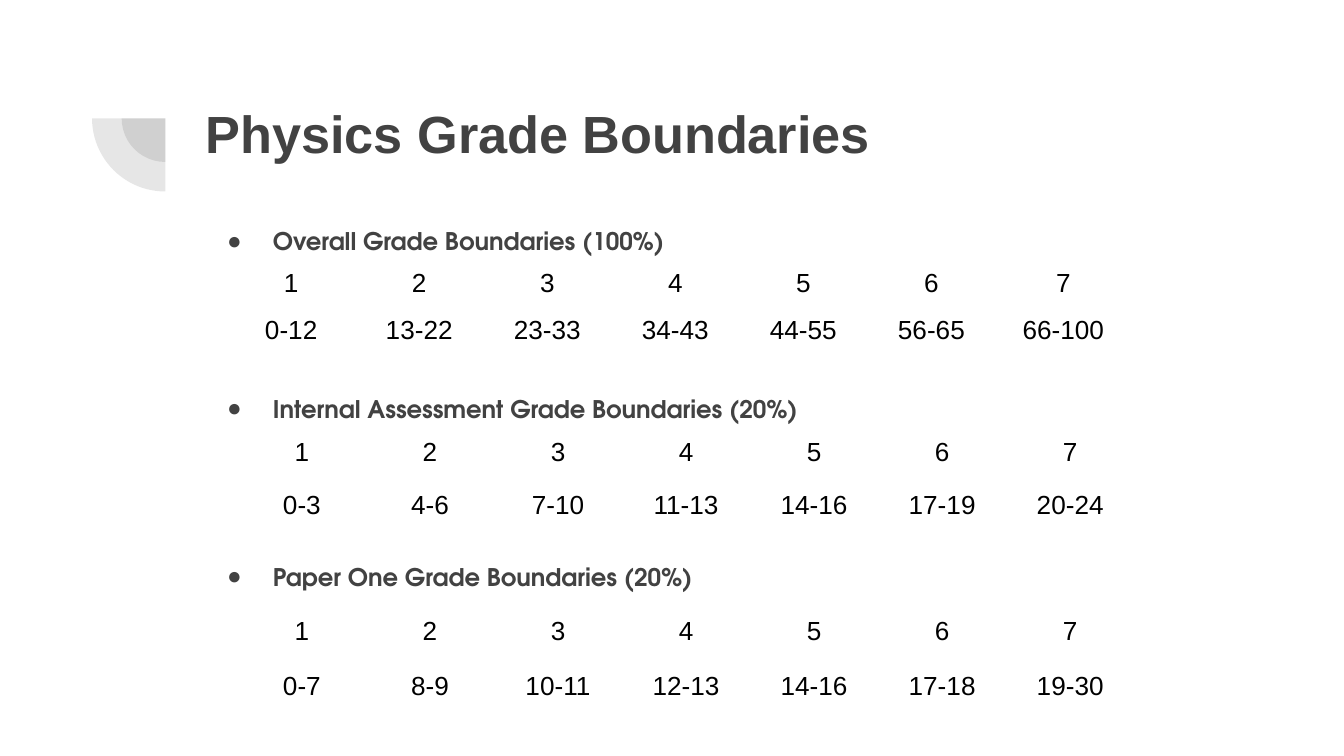
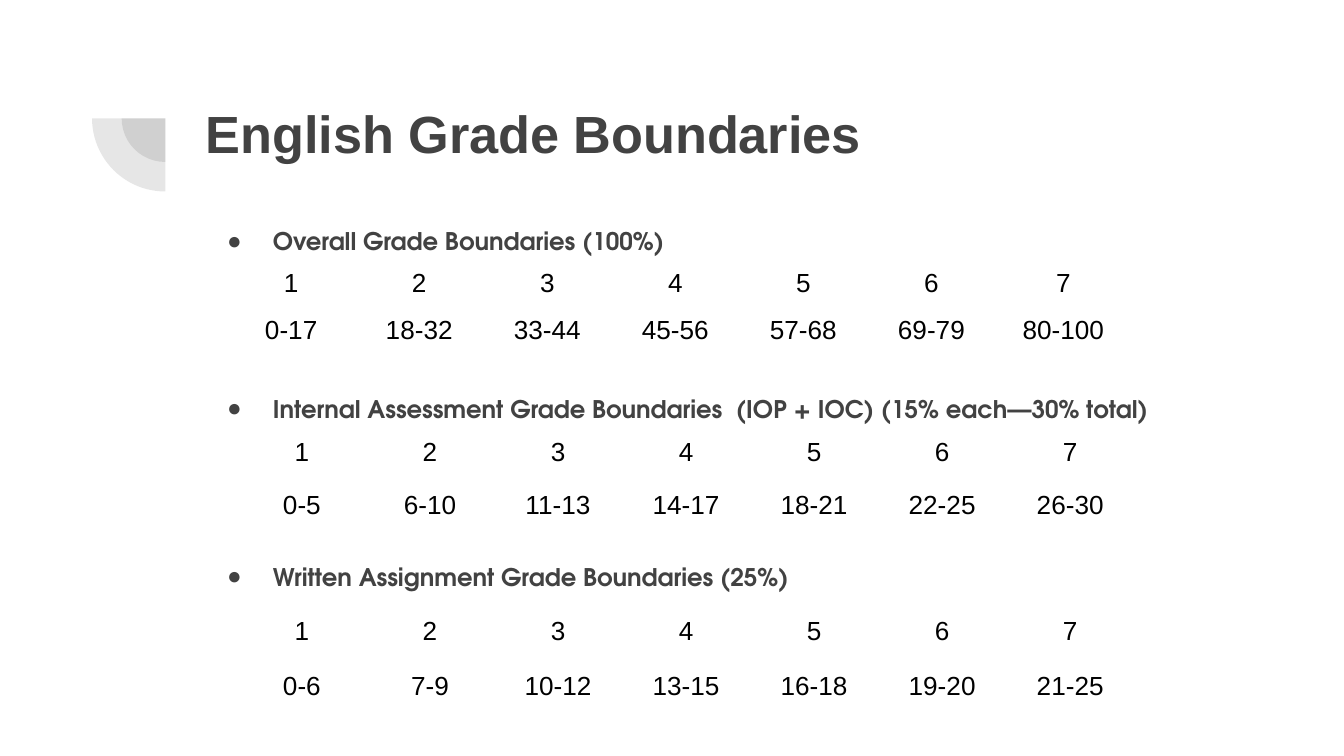
from lxml import etree
from pptx import Presentation
from pptx.dml.color import RGBColor
from pptx.enum.shapes import MSO_SHAPE
from pptx.enum.text import MSO_ANCHOR, MSO_AUTO_SIZE, PP_ALIGN
from pptx.oxml.ns import qn
from pptx.util import Inches, Pt

PIE = MSO_SHAPE.PIE
TOP = MSO_ANCHOR.TOP
NO_FIT = MSO_AUTO_SIZE.NONE
LEFT, CENTER = PP_ALIGN.LEFT, PP_ALIGN.CENTER

COLORS = {"text": "424242", "table": "000000", "background": "FFFFFF"}
TITLE_FONT, HEADING_FONT = "Arial", "TeX Gyre Adventor"
GRADES = ["1", "2", "3", "4", "5", "6", "7"]

SUBJECTS = [
    ("Physics Grade Boundaries", [
        ("Overall Grade Boundaries (100%)",
         ["0-12", "13-22", "23-33", "34-43", "44-55", "56-65", "66-100"]),
        ("Internal Assessment Grade Boundaries (20%)",
         ["0-3", "4-6", "7-10", "11-13", "14-16", "17-19", "20-24"]),
        ("Paper One Grade Boundaries (20%)",
         ["0-7", "8-9", "10-11", "12-13", "14-16", "17-18", "19-30"]),
    ]),
    ("English Grade Boundaries", [
        ("Overall Grade Boundaries (100%)",
         ["0-17", "18-32", "33-44", "45-56", "57-68", "69-79", "80-100"]),
        ("Internal Assessment Grade Boundaries  (IOP + IOC) (15% each—30% total)",
         ["0-5", "6-10", "11-13", "14-17", "18-21", "22-25", "26-30"]),
        ("Written Assignment Grade Boundaries (25%)",
         ["0-6", "7-9", "10-12", "13-15", "16-18", "19-20", "21-25"]),
    ]),
]

SLIDE_WIDTH = Inches(10)
SLIDE_HEIGHT = SLIDE_WIDTH * 9 // 16
TITLE_BOX = (1.43, 0.65, 7.69, 1.09)
BODY_BOX = (1.43, 1.55, 7.69, 3.7)
HEADING_GAP = 72
COLUMN_WIDTH = 6.67 / len(GRADES)
TABLE_LAYOUTS = [
    {"left": 1.69, "top": 1.95, "rows": (0.35, 0.44), "last_column": 1.01},
    {"left": 1.77, "top": 3.21, "rows": (0.39, 0.39), "last_column": COLUMN_WIDTH},
    {"left": 1.77, "top": 4.54, "rows": (0.41, 0.41), "last_column": COLUMN_WIDTH},
]
PIE_CENTER = (1.23, 0.88)
PIE_DIAMETERS = (0.65, 1.09)


def rgb(name):
    return RGBColor.from_string(COLORS[name])


def style_runs(paragraph, font, size, color, bold=False):
    for run in paragraph.runs:
        run.font.name = font
        run.font.size = Pt(size)
        run.font.bold = bold
        run.font.color.rgb = rgb(color)


def place_placeholder(placeholder, box):
    placeholder.left, placeholder.top, placeholder.width, placeholder.height = map(Inches, box)
    frame = placeholder.text_frame
    frame.margin_left = frame.margin_right = Inches(0.1)
    frame.margin_top = frame.margin_bottom = Inches(0.1)
    frame.vertical_anchor = TOP
    frame.auto_size = NO_FIT
    frame.word_wrap = True
    return frame


def add_bullet(paragraph):
    properties = paragraph._p.get_or_add_pPr()
    properties.set("marL", str(Inches(0.5)))
    properties.set("indent", str(Inches(-0.34)))
    color = etree.SubElement(properties, qn("a:buClr"))
    etree.SubElement(color, qn("a:srgbClr"), val=COLORS["text"])
    etree.SubElement(properties, qn("a:buFont"), typeface=TITLE_FONT)
    etree.SubElement(properties, qn("a:buChar"), char="●")


def add_title(slide, title):
    frame = place_placeholder(slide.shapes.title, TITLE_BOX)
    frame.text = title
    paragraph = frame.paragraphs[0]
    paragraph.alignment = LEFT
    style_runs(paragraph, TITLE_FONT, 28, "text", bold=True)


def add_headings(slide, headings):
    frame = place_placeholder(slide.placeholders[1], BODY_BOX)
    frame.text = "\n".join(headings)
    for index, paragraph in enumerate(frame.paragraphs):
        paragraph.line_spacing = 1.15
        paragraph.space_before = Pt(HEADING_GAP if index else 0)
        add_bullet(paragraph)
        style_runs(paragraph, HEADING_FONT, 13, "text", bold=True)


def add_boundary_table(slide, boundaries, layout):
    widths = [COLUMN_WIDTH] * (len(GRADES) - 1) + [layout["last_column"]]
    heights = layout["rows"]
    table = slide.shapes.add_table(
        len(heights), len(widths), Inches(layout["left"]), Inches(layout["top"]),
        Inches(sum(widths)), Inches(sum(heights))).table
    table.first_row = table.horz_banding = False
    for column, width in zip(table.columns, widths):
        column.width = Inches(width)
    for row, height, values in zip(table.rows, heights, (GRADES, boundaries)):
        row.height = Inches(height)
        for cell, value in zip(row.cells, values):
            cell.fill.background()
            cell.text_frame.text = value
            paragraph = cell.text_frame.paragraphs[0]
            paragraph.alignment = CENTER
            style_runs(paragraph, TITLE_FONT, 14, "table")


def add_corner_pies(slide):
    layout_tree = slide.slide_layout.element.cSld.spTree
    center_x, center_y = PIE_CENTER
    for position, diameter in enumerate(PIE_DIAMETERS):
        pie = slide.shapes.add_shape(
            PIE, Inches(center_x - diameter / 2), Inches(center_y - diameter / 2),
            Inches(diameter), Inches(diameter))
        pie.adjustments[0], pie.adjustments[1] = 108, 162
        pie.rotation = 270
        pie.shadow.inherit = False
        pie.line.fill.background()
        pie.fill.solid()
        pie.fill.fore_color.rgb = rgb("text")
        color = pie.element.spPr.find(qn("a:solidFill")).find(qn("a:srgbClr"))
        etree.SubElement(color, qn("a:alpha"), val="13000")
        layout_tree.insert(2 + position, pie.element)


def main():
    presentation = Presentation()
    presentation.slide_width, presentation.slide_height = SLIDE_WIDTH, SLIDE_HEIGHT
    background = presentation.slide_master.background.fill
    background.solid()
    background.fore_color.rgb = rgb("background")
    content_layout = presentation.slide_layouts[1]
    for index, (title, sections) in enumerate(SUBJECTS):
        slide = presentation.slides.add_slide(content_layout)
        if index == 0:
            add_corner_pies(slide)
        add_title(slide, title)
        add_headings(slide, [heading for heading, _ in sections])
        for (_, boundaries), layout in zip(sections, TABLE_LAYOUTS):
            add_boundary_table(slide, boundaries, layout)
    presentation.save("out.pptx")


if __name__ == "__main__":
    main()
